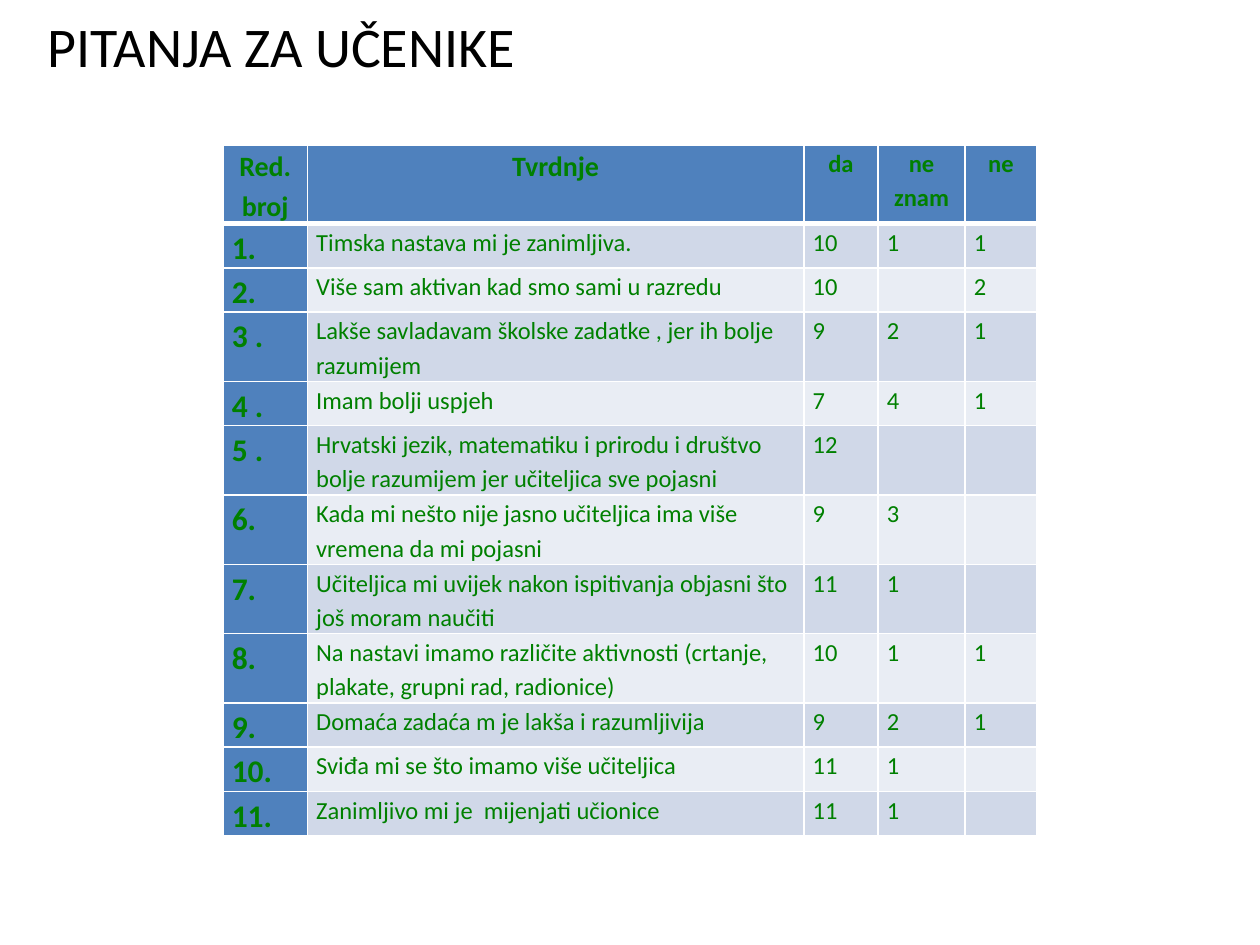
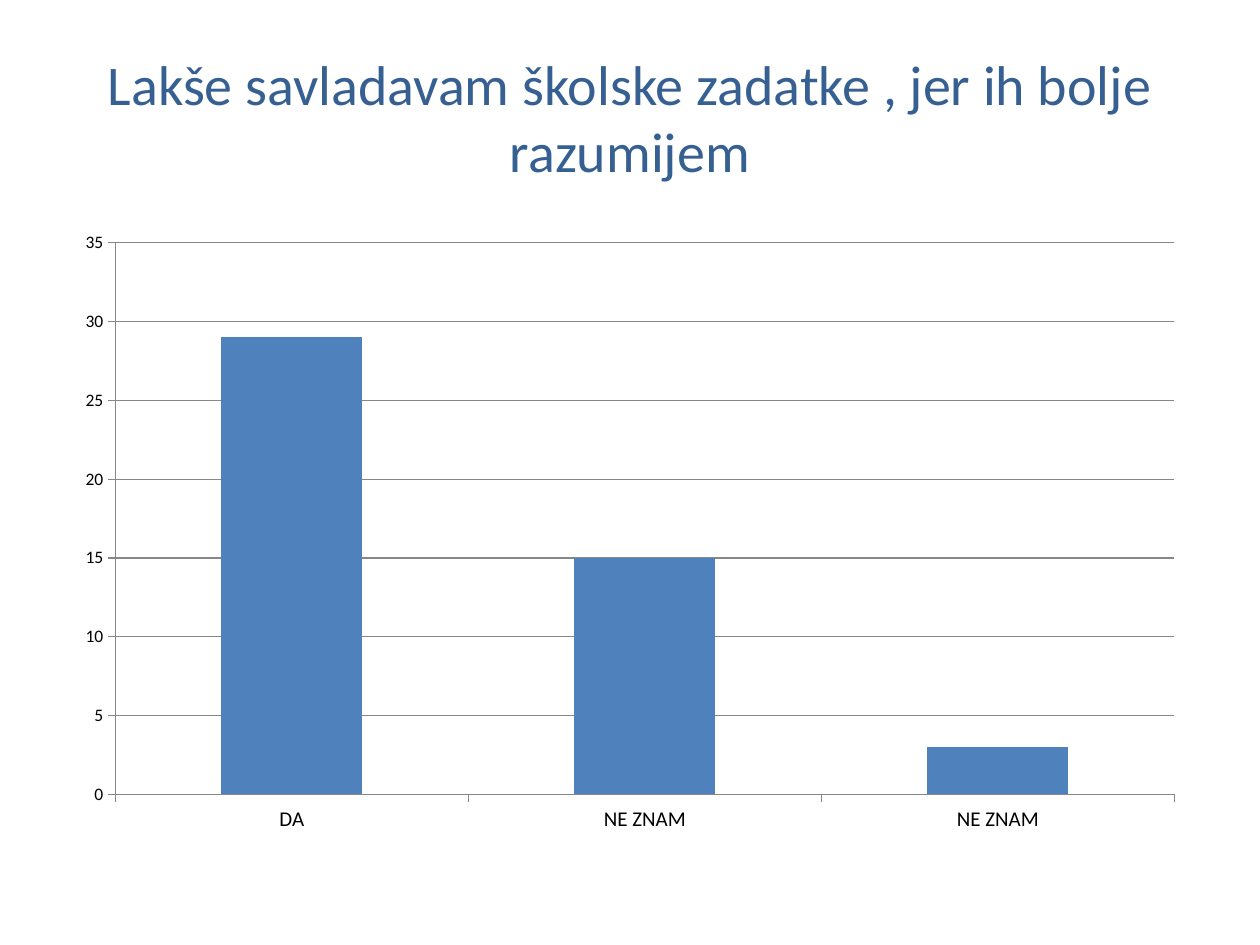
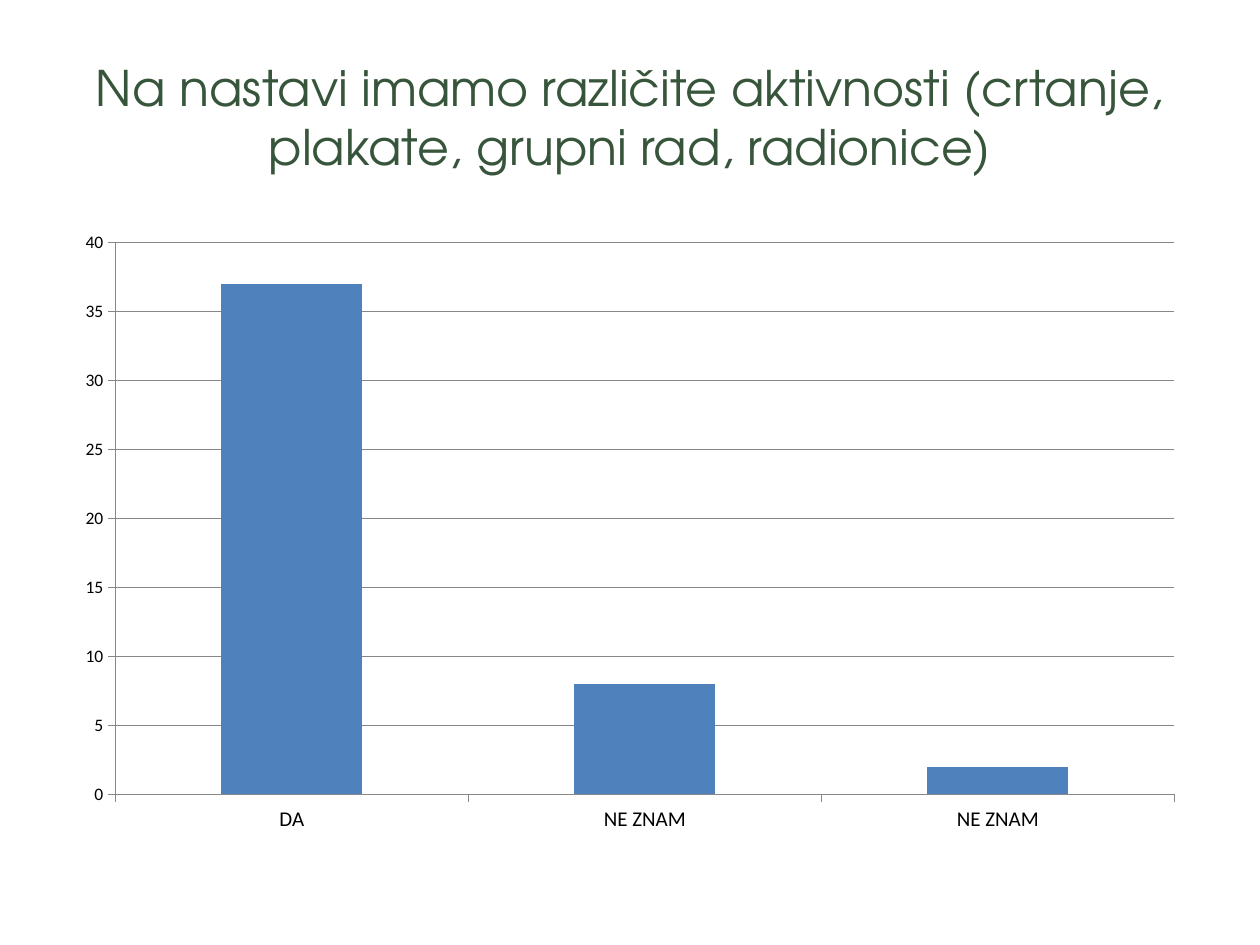
from dataclasses import dataclass

from lxml import etree
from pptx import Presentation
from pptx.chart.data import CategoryChartData
from pptx.dml.color import RGBColor
from pptx.enum import chart as charts, text
from pptx.oxml.ns import qn
from pptx.util import Inches, Pt

FONT = "Calibri"
BLUE, GREEN, WHITE, BLACK, GRAY = "4F81BD", "008000", "FFFFFF", "000000", "878787"
BANDS = ("D0D8E8", "E9EDF4")
TITLE_ONLY = 5
CENTER, LEFT = text.PP_ALIGN.CENTER, text.PP_ALIGN.LEFT

COLUMN_WIDTHS = (0.67, 3.94, 0.59, 0.69, 0.57)
HEADER_HEIGHT, ONE_LINE, TWO_LINES = 0.62, 0.35, 0.55
LINE_LIMIT = 45  # characters that fit on one line of the statement column
HEADERS = (("Red. broj", 16), ("Tvrdnje", 16), ("da", 14), ("ne znam", 14), ("ne", 14))
STATEMENTS = (
    ("1.", "Timska nastava mi je zanimljiva.", "10", "1", "1"),
    ("2.", "Više sam aktivan kad smo sami u razredu", "10", "", "2"),
    ("3 .", "Lakše savladavam školske zadatke , jer ih bolje razumijem", "9", "2", "1"),
    ("4 .", "Imam bolji uspjeh", "7", "4", "1"),
    ("5 .", "Hrvatski jezik, matematiku i prirodu i društvo bolje razumijem "
     "jer učiteljica sve pojasni", "12", "", ""),
    ("6.", "Kada mi nešto nije jasno učiteljica ima više vremena da mi pojasni",
     "9", "3", ""),
    ("7.", "Učiteljica mi uvijek nakon ispitivanja objasni što još moram naučiti",
     "11", "1", ""),
    ("8.", "Na nastavi imamo različite aktivnosti (crtanje, plakate, grupni rad, "
     "radionice)", "10", "1", "1"),
    ("9.", "Domaća zadaća m je lakša i razumljivija", "9", "2", "1"),
    ("10.", "Sviđa mi se što imamo više učiteljica", "11", "1", ""),
    ("11.", "Zanimljivo mi je  mijenjati učionice", "11", "1", ""),
)


@dataclass(frozen=True)
class Title:
    words: str
    color: str
    size: int = 32
    font: str = FONT
    left: float = 0.5
    top: float = 0.3
    align: text.PP_ALIGN = CENTER


@dataclass(frozen=True)
class AnswerChart:
    title: Title
    answers: tuple[int, ...]
    maximum: int


CATEGORIES = ("DA", "NE ZNAM", "NE ZNAM")
ANSWER_CHARTS = (
    AnswerChart(Title(STATEMENTS[2][1], "376092"), (29, 15, 3), 35),
    AnswerChart(Title(STATEMENTS[7][1], "37553B", 28, "TeX Gyre Adventor"), (37, 8, 2), 40),
)


def rgb(color: str) -> RGBColor:
    return RGBColor.from_string(color)


def set_font(font, color: str, size: int, name: str = FONT, bold: bool = False) -> None:
    for key, value in {"name": name, "size": Pt(size), "bold": bold}.items():
        setattr(font, key, value)
    font.color.rgb = rgb(color)


def add_page(deck, title: Title):
    page = deck.slides.add_slide(deck.slide_layouts[TITLE_ONLY])
    box = page.shapes.title
    place = {"left": title.left, "top": title.top, "width": 9, "height": 1.25}
    for key, value in place.items():
        setattr(box, key, Inches(value))
    box.text_frame.vertical_anchor = text.MSO_ANCHOR.MIDDLE
    para = box.text_frame.paragraphs[0]
    para.alignment = title.align
    span = para.add_run()
    span.text = title.words
    set_font(span.font, title.color, title.size, title.font)
    return page


def set_borders(cell, widths: dict[str, int]) -> None:
    """Draw white borders; widths are points by side, in the order L, R, T, B."""
    properties = cell._tc.get_or_add_tcPr()
    for side, width in widths.items():
        line = etree.SubElement(properties, qn(f"a:ln{side}"), w=str(Pt(width)))
        fill = etree.SubElement(line, qn("a:solidFill"))
        etree.SubElement(fill, qn("a:srgbClr"), val=WHITE)


def fill_cell(cell, words: str, fill: str, size: int, bold: bool, align: text.PP_ALIGN,
              top: int = 1, bottom: int = 1) -> None:
    set_borders(cell, {"L": 1, "R": 1, "T": top, "B": bottom})
    cell.fill.solid()
    cell.fill.fore_color.rgb = rgb(fill)
    margins = {"margin_left": 0.07, "margin_right": 0.07, "margin_top": 0, "margin_bottom": 0}
    for key, value in margins.items():
        setattr(cell, key, Inches(value))
    para = cell.text_frame.paragraphs[0]
    para.alignment = align
    para.line_spacing = 1.15
    if words:
        span = para.add_run()
        span.text = words
        set_font(span.font, GREEN, size, bold=bold)


def add_statement_table(page) -> None:
    heights = [HEADER_HEIGHT] + [
        TWO_LINES if len(row[1]) > LINE_LIMIT else ONE_LINE for row in STATEMENTS]
    frame = page.shapes.add_table(
        len(heights), len(COLUMN_WIDTHS), Inches(1.77), Inches(1.15),
        Inches(sum(COLUMN_WIDTHS)), Inches(sum(heights)))
    table = frame.table
    table.first_col = True
    for column, width in zip(table.columns, COLUMN_WIDTHS):
        column.width = Inches(width)
    for row, height in zip(table.rows, heights):
        row.height = Inches(height)
    for column, (words, size) in enumerate(HEADERS):
        fill_cell(table.cell(0, column), words, BLUE, size, True, CENTER, bottom=3)
    for number, statement in enumerate(STATEMENTS, 1):
        band = BANDS[(number - 1) % 2]
        for column, words in enumerate(statement):
            first = column == 0
            fill_cell(table.cell(number, column), words, BLUE if first else band,
                      18 if first else 14, first, LEFT, top=3 if number == 1 else 1)


def add_answer_chart(page, content: AnswerChart) -> None:
    data = CategoryChartData()
    data.categories = CATEGORIES
    data.add_series("Series 1", content.answers)
    chart = page.shapes.add_chart(
        charts.XL_CHART_TYPE.COLUMN_CLUSTERED, Inches(0.5), Inches(1.75),
        Inches(9), Inches(4.95), data).chart
    chart.has_title = chart.has_legend = False
    set_font(chart.font, BLACK, 10)
    plot = chart.plots[0]
    plot.gap_width = 150
    plot.vary_by_categories = False
    bars = plot.series[0].format.fill
    bars.solid()
    bars.fore_color.rgb = rgb(BLUE)
    values = chart.value_axis
    scale = {"minimum_scale": 0, "maximum_scale": content.maximum, "major_unit": 5,
             "has_major_gridlines": True}
    for key, value in scale.items():
        setattr(values, key, value)
    for axis, size in ((chart.category_axis, 12), (values, 10)):
        axis.major_tick_mark = charts.XL_TICK_MARK.OUTSIDE
        axis.minor_tick_mark = charts.XL_TICK_MARK.NONE
        set_font(axis.tick_labels.font, BLACK, size)
    for part in (chart.category_axis, values, values.major_gridlines):
        part.format.line.color.rgb = rgb(GRAY)
        part.format.line.width = Pt(0.75)


def main() -> None:
    deck = Presentation()
    deck.slide_width, deck.slide_height = Inches(10), Inches(7.5)
    questions = Title("PITANJA ZA UČENIKE", BLACK, left=0.28, top=-0.27, align=LEFT)
    add_statement_table(add_page(deck, questions))
    for content in ANSWER_CHARTS:
        add_answer_chart(add_page(deck, content.title), content)
    deck.save("out.pptx")


if __name__ == "__main__":
    main()
